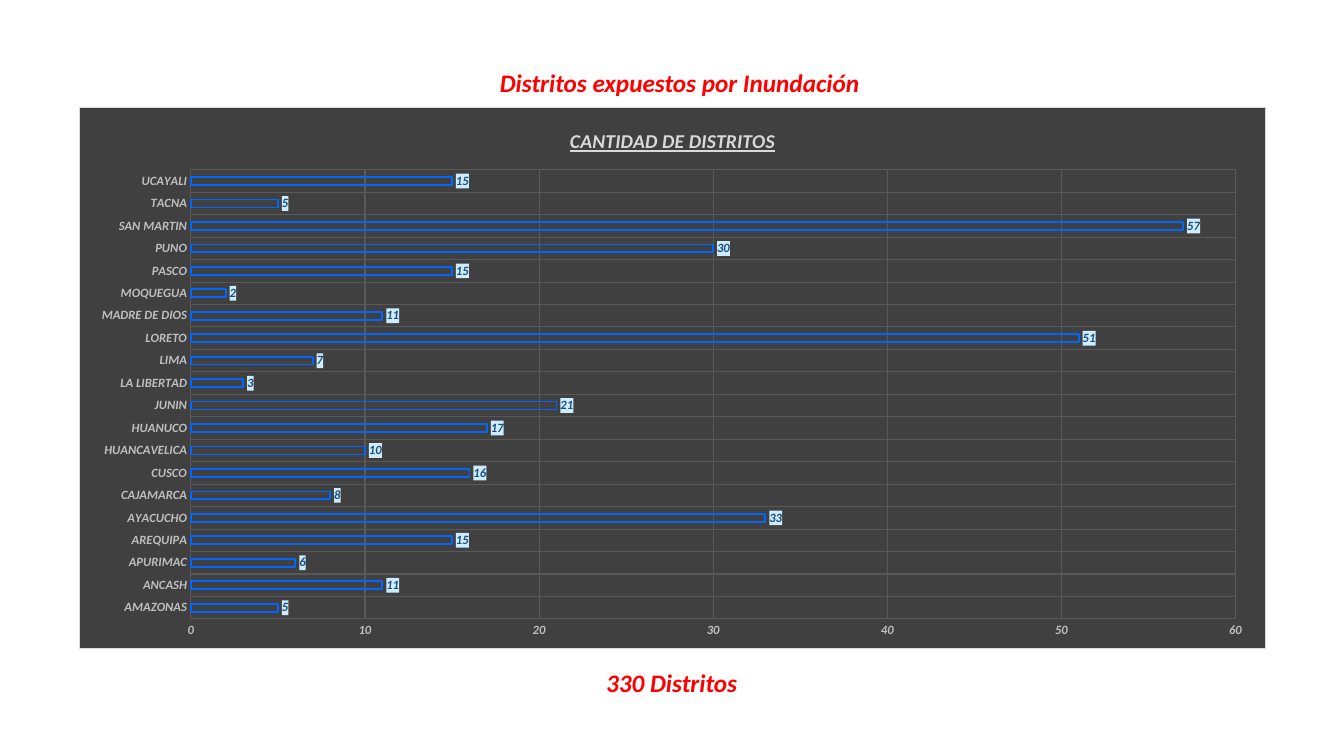
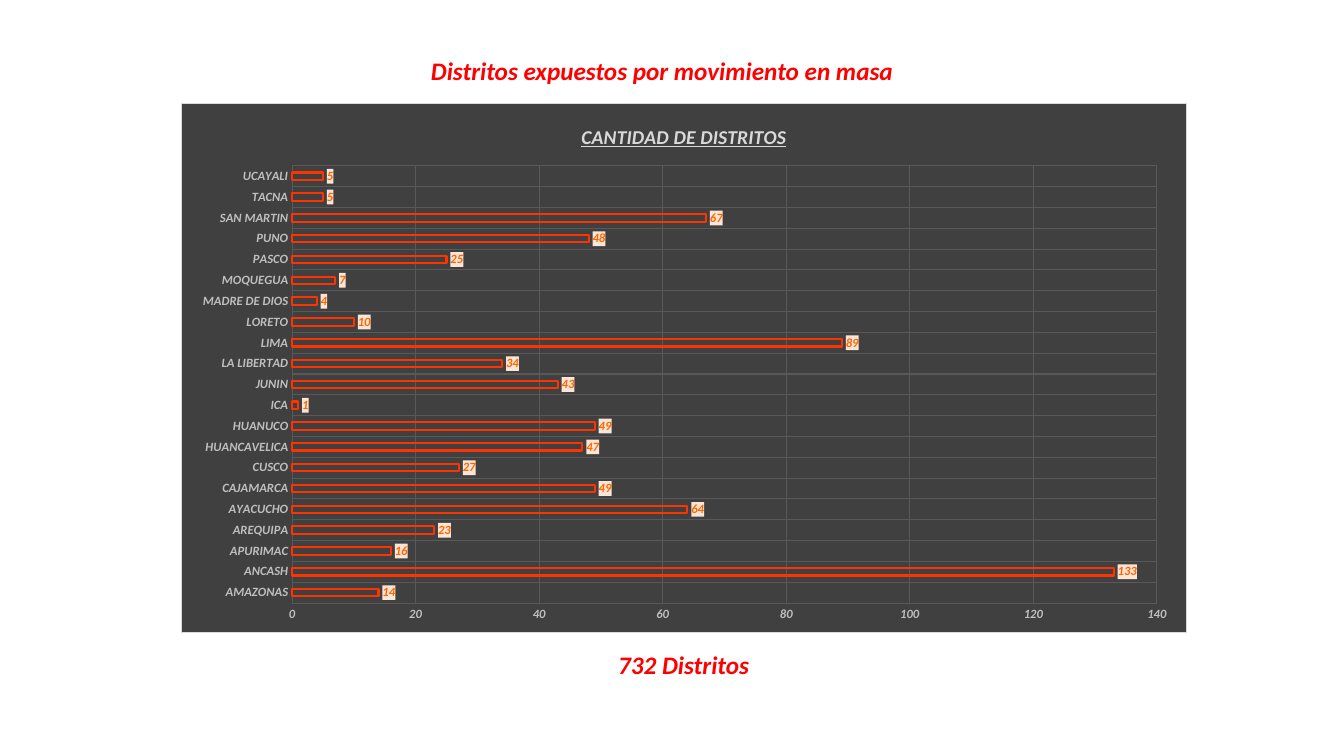
from lxml import etree
from pptx import Presentation
from pptx.chart.data import CategoryChartData
from pptx.dml.color import RGBColor
from pptx.enum import chart as ce, text as te
from pptx.oxml.ns import qn
from pptx.util import Cm, Pt

FONT = "Calibri"
RED = RGBColor(0xFF, 0x00, 0x00)
BLACK = RGBColor(0x00, 0x00, 0x00)
PANEL = RGBColor(0x40, 0x40, 0x40)
PANEL_BORDER = RGBColor(0xD9, 0xD9, 0xD9)
GRID = RGBColor(0x59, 0x59, 0x59)
AXIS_TEXT = RGBColor(0xBF, 0xBF, 0xBF)
FLOOD_BAR = RGBColor(0x00, 0x66, 0xFF)
FLOOD_TEXT = RGBColor(0x1F, 0x4E, 0x79)
FLOOD_TAG = RGBColor(0xCC, 0xEC, 0xFF)
SLIDE_BAR = RGBColor(0xFF, 0x33, 0x00)
SLIDE_TEXT = RGBColor(0xFF, 0x66, 0x00)
SLIDE_TAG = RGBColor(0xFB, 0xE5, 0xD6)

# Space between the chart's edge and its plot, in cm
PLOT_LEFT, PLOT_TOP, PLOT_RIGHT, PLOT_BOTTOM = 2.8, 1.57, 0.75, 0.74

# Region: (districts exposed to floods, districts exposed to mass movement)
DISTRICTS = {
    "AMAZONAS": (5, 14),
    "ANCASH": (11, 133),
    "APURIMAC": (6, 16),
    "AREQUIPA": (15, 23),
    "AYACUCHO": (33, 64),
    "CAJAMARCA": (8, 49),
    "CUSCO": (16, 27),
    "HUANCAVELICA": (10, 47),
    "HUANUCO": (17, 49),
    "ICA": (None, 1),
    "JUNIN": (21, 43),
    "LA LIBERTAD": (3, 34),
    "LIMA": (7, 89),
    "LORETO": (51, 10),
    "MADRE DE DIOS": (11, 4),
    "MOQUEGUA": (2, 7),
    "PASCO": (15, 25),
    "PUNO": (30, 48),
    "SAN MARTIN": (57, 67),
    "TACNA": (5, 5),
    "UCAYALI": (15, 5),
}


def style_font(font, size, color, underline=None):
    font.name = FONT
    font.size = Pt(size)
    font.color.rgb = color
    font.bold = font.italic = True
    font.underline = underline


def add_caption(slide, caption, left, top, width):
    box = slide.shapes.add_textbox(Cm(left), Cm(top), Cm(width), Cm(1.03))
    frame = box.text_frame
    frame.word_wrap = False
    frame.auto_size = te.MSO_AUTO_SIZE.SHAPE_TO_FIT_TEXT
    paragraph = frame.paragraphs[0]
    paragraph.alignment = te.PP_ALIGN.CENTER
    run = paragraph.add_run()
    run.text = caption
    style_font(run.font, 18, RED)


def fill_properties(fill, border=None):
    """Return a c:spPr element with a solid fill and an optional thin border."""
    properties = etree.Element(qn("c:spPr"))

    def add_solid(parent, color):
        solid = etree.SubElement(parent, qn("a:solidFill"))
        etree.SubElement(solid, qn("a:srgbClr"), val=str(color))

    add_solid(properties, fill)
    if border is not None:
        line = etree.SubElement(properties, qn("a:ln"), w=str(Pt(0.75)))
        add_solid(line, border)
    return properties


def place_plot(chart, width, height):
    """Fix the inner plot area by its margins inside the chart."""
    plot_area = chart._chartSpace.find(".//" + qn("c:plotArea"))
    for old in plot_area.findall(qn("c:layout")):
        plot_area.remove(old)
    layout = etree.Element(qn("c:layout"))
    plot_area.insert(0, layout)
    manual = etree.SubElement(layout, qn("c:manualLayout"))
    settings = {
        "layoutTarget": "inner",
        "xMode": "edge",
        "yMode": "edge",
        "x": PLOT_LEFT / width,
        "y": PLOT_TOP / height,
        "w": 1 - (PLOT_LEFT + PLOT_RIGHT) / width,
        "h": 1 - (PLOT_TOP + PLOT_BOTTOM) / height,
    }
    for tag, value in settings.items():
        etree.SubElement(manual, qn("c:" + tag), val=str(value))


def style_axis(axis):
    axis.major_tick_mark = axis.minor_tick_mark = ce.XL_TICK_MARK.NONE
    axis.format.line.fill.background()
    axis.has_major_gridlines = True
    grid = axis.major_gridlines.format.line
    grid.color.rgb = GRID
    grid.width = Pt(0.75)
    style_font(axis.tick_labels.font, 9, AXIS_TEXT)


def style_bars(plot, color, line_width, label_color, tag_color):
    plot.gap_width = 182
    plot.overlap = -50
    plot.vary_by_categories = False
    bars = plot.series[0]
    bars.invert_if_negative = False
    bars.format.fill.background()
    bars.format.line.color.rgb = color
    bars.format.line.width = Pt(line_width)
    labels = bars.data_labels
    labels.show_value = True
    labels.position = ce.XL_LABEL_POSITION.OUTSIDE_END
    labels.number_format = "#,##0"
    labels.number_format_is_linked = False
    style_font(labels.font, 9, label_color)
    label_text = labels._element.find(qn("c:txPr"))
    label_text.addprevious(fill_properties(tag_color))


def add_district_chart(slide, counts, place, scale, bar_style):
    left, top, width, height = place
    data = CategoryChartData(number_format="#,##0")
    data.categories = list(counts)
    data.add_series("Series 1", list(counts.values()))
    chart = slide.shapes.add_chart(
        ce.XL_CHART_TYPE.BAR_CLUSTERED,
        Cm(left), Cm(top), Cm(width), Cm(height), data).chart
    chart.has_legend = False
    chart.font.name = FONT
    chart.font.size = Pt(10)
    chart.font.color.rgb = BLACK
    chart_part = chart._chartSpace.find(qn("c:chart"))
    chart_part.addnext(fill_properties(PANEL, PANEL_BORDER))

    chart.has_title = True
    heading = chart.chart_title.text_frame.paragraphs[0].add_run()
    heading.text = "CANTIDAD DE DISTRITOS"
    style_font(heading.font, 14, PANEL_BORDER, underline=True)

    for axis in (chart.category_axis, chart.value_axis):
        style_axis(axis)
    values = chart.value_axis
    values.minimum_scale = 0
    values.maximum_scale, values.major_unit = scale
    values.tick_labels.number_format = "#,##0"
    values.tick_labels.number_format_is_linked = False
    style_bars(chart.plots[0], *bar_style)
    place_plot(chart, width, height)


def hazard_counts(column):
    """Return the districts per region for one hazard, without empty regions."""
    return {region: counts[column] for region, counts in DISTRICTS.items()
            if counts[column] is not None}


def main():
    deck = Presentation()
    deck.slide_width, deck.slide_height = Cm(33.87), Cm(19.05)
    blank = deck.slide_layouts[6]

    floods = deck.slides.add_slide(blank)
    add_caption(floods, "Distritos expuestos por Inundación", 12.29, 1.57, 9.68)
    add_caption(floods, "330 Distritos", 15.01, 16.69, 3.84)
    add_district_chart(floods, hazard_counts(0), (2, 2.7, 29.9, 13.65), (60, 10),
                       (FLOOD_BAR, 1.25, FLOOD_TEXT, FLOOD_TAG))

    mass_movement = deck.slides.add_slide(blank)
    add_caption(mass_movement, "Distritos expuestos por movimiento en masa",
                10.54, 1.27, 12.29)
    add_caption(mass_movement, "732 Distritos", 15.11, 16.23, 4.24)
    add_district_chart(mass_movement, hazard_counts(1), (4.55, 2.6, 25.37, 13.35),
                       (140, 20), (SLIDE_BAR, 1.5, SLIDE_TEXT, SLIDE_TAG))

    deck.save("out.pptx")


if __name__ == "__main__":
    main()
